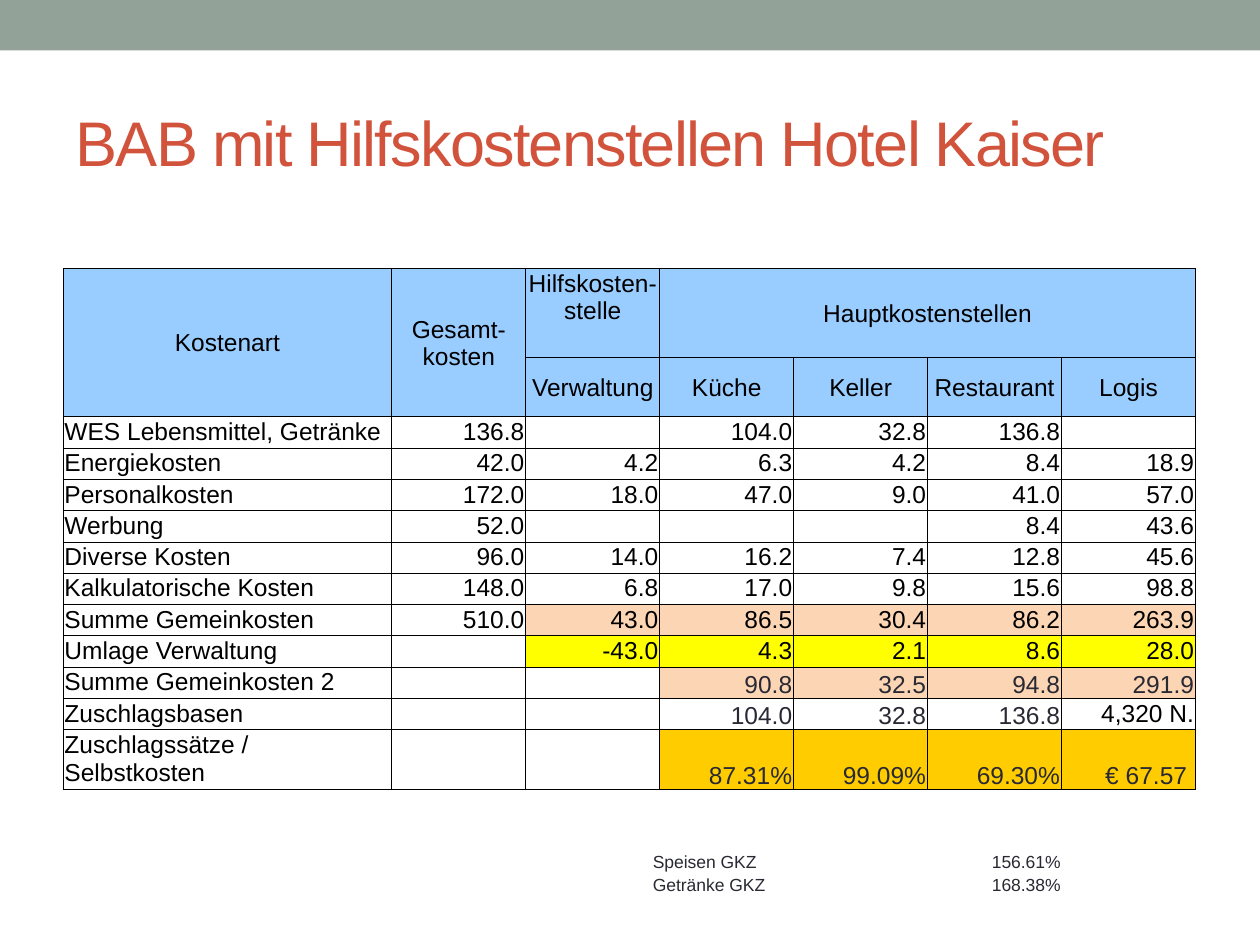
from dataclasses import dataclass
from typing import Optional, Sequence

from lxml.etree import SubElement
from pptx import Presentation
from pptx.dml.color import RGBColor
from pptx.enum.shapes import MSO_SHAPE as SHAPE
from pptx.enum.text import MSO_ANCHOR as ANCHOR, MSO_AUTO_SIZE as AUTO, PP_ALIGN as ALIGN
from pptx.oxml.ns import qn
from pptx.util import Cm, Pt

FONT = "Arial"
BLACK, DARK = "000000", "292934"
BLUE, PEACH, YELLOW, GOLD = "99CCFF", "FCD5B4", "FFFF00", "FFCC00"
MARGINS = {"margin_left": Cm(0.03), "margin_right": Cm(0.03),
           "margin_top": Cm(0.03), "margin_bottom": 0}


@dataclass
class CellFormat:
    size: int = 14
    color: str = BLACK
    fill: Optional[str] = None
    align: ALIGN = ALIGN.LEFT
    anchor: ANCHOR = ANCHOR.TOP
    border: Optional[float] = 0.5


@dataclass
class CostRow:
    label: str
    values: Sequence[str]
    fill: Optional[str] = None
    fill_from: int = 3
    dark: range = range(0)


HEADER = [  # row, column, text, last row, last column
    (0, 0, "Kostenart", 1, 0),
    (0, 1, "Gesamt-kosten", 1, 1),
    (0, 2, "Hilfskosten-stelle", 0, 2),
    (0, 3, "Hauptkostenstellen", 0, 6),
    *((1, col, text, 1, col) for col, text in enumerate(
        ("Verwaltung", "Küche", "Keller", "Restaurant", "Logis"), 2)),
]
COSTS = [
    CostRow("WES Lebensmittel, Getränke", ("136.8", "", "104.0", "32.8", "136.8", "")),
    CostRow("Energiekosten", ("42.0", "4.2", "6.3", "4.2", "8.4", "18.9")),
    CostRow("Personalkosten", ("172.0", "18.0", "47.0", "9.0", "41.0", "57.0")),
    CostRow("Werbung", ("52.0", "", "", "", "8.4", "43.6")),
    CostRow("Diverse Kosten", ("96.0", "14.0", "16.2", "7.4", "12.8", "45.6")),
    CostRow("Kalkulatorische Kosten", ("148.0", "6.8", "17.0", "9.8", "15.6", "98.8")),
    CostRow("Summe Gemeinkosten", ("510.0", "43.0", "86.5", "30.4", "86.2", "263.9"), PEACH, 2),
    CostRow("Umlage Verwaltung", ("", "-43.0", "4.3", "2.1", "8.6", "28.0"), YELLOW, 2),
    CostRow("Summe Gemeinkosten 2", ("", "", "90.8", "32.5", "94.8", "291.9"),
            PEACH, dark=range(3, 7)),
    CostRow("Zuschlagsbasen", ("", "", "104.0", "32.8", "136.8", "4,320 N."), dark=range(3, 6)),
    CostRow("Zuschlagssätze / Selbstkosten", ("", "", "87.31%", "99.09%", "69.30%", " € 67.57 "),
            GOLD, dark=range(3, 7)),
]
SURCHARGES = [("Speisen GKZ", "", "156.61%"), ("Getränke GKZ", "", "168.38%")]


def rgb(value: str) -> RGBColor:
    return RGBColor.from_string(value)


def apply(target, values: dict) -> None:
    for name, value in values.items():
        setattr(target, name, value)


def set_borders(cell, width: Optional[float]) -> None:
    """Outline a cell in black, or clear its lines when there is no width."""
    tc_pr = cell._tc.get_or_add_tcPr()
    for side in ("lnL", "lnR", "lnT", "lnB"):
        line = SubElement(tc_pr, qn(f"a:{side}"))
        if width is None:
            SubElement(line, qn("a:noFill"))
        else:
            line.set("w", str(Pt(width)))
            SubElement(SubElement(line, qn("a:solidFill")), qn("a:srgbClr")).set("val", BLACK)


def format_cell(cell, text: str, fmt: CellFormat) -> None:
    apply(cell, {**MARGINS, "vertical_anchor": fmt.anchor})
    set_borders(cell, fmt.border)
    if fmt.fill:
        cell.fill.solid()
        cell.fill.fore_color.rgb = rgb(fmt.fill)
    else:
        cell.fill.background()
    p = cell.text_frame.paragraphs[0]
    p.alignment = fmt.align
    if text:
        r = p.add_run()
        apply(r, {"text": text})
        apply(r.font, {"name": FONT, "size": Pt(fmt.size)})
        r.font.color.rgb = rgb(fmt.color)
    else:  # keeps empty cells from stretching their row
        SubElement(p._p, qn("a:endParaRPr")).set("sz", str(fmt.size * 100))


def add_plain_table(slide, left: float, top: float, widths: Sequence[float],
                    heights: Sequence[float]):
    frame = slide.shapes.add_table(len(heights), len(widths), Cm(left), Cm(top),
                                   Cm(sum(widths)), Cm(sum(heights)))
    table = frame.table
    apply(table, {"first_row": False, "horz_banding": False})
    for column, width in zip(table.columns, widths):
        column.width = Cm(width)
    for row, height in zip(table.rows, heights):
        row.height = Cm(height)
    return table


def add_title(slide, text: str) -> None:
    sp = slide.shapes.title
    apply(sp, {"left": Cm(1.27), "top": Cm(1.47), "width": Cm(22.86), "height": Cm(2.74)})
    tf = sp.text_frame
    apply(tf, {"word_wrap": True, "auto_size": AUTO.NONE, "vertical_anchor": ANCHOR.MIDDLE})
    p = tf.paragraphs[0]
    p.alignment = ALIGN.LEFT
    r = p.add_run()
    r.text = text
    apply(r.font, {"name": FONT, "size": Pt(36)})
    r.font.color.rgb = rgb("D2533C")
    r._r.get_or_add_rPr().set("spc", "-100")


def add_band(slide) -> None:
    sp = slide.shapes.add_shape(SHAPE.RECTANGLE, 0, 0, Cm(25.4), Cm(1.02))
    sp.shadow.inherit = False
    sp.fill.solid()
    sp.fill.fore_color.rgb = rgb("93A299")
    sp.line.fill.background()


def add_cost_table(slide) -> None:
    heights = [1.79, 1.2] + [0.63] * (len(COSTS) - 1) + [1.21]
    table = add_plain_table(slide, 1.27, 5.41, [6.63] + [2.7] * 6, heights)

    # Header with merged cells
    texts = {(row, col): text for row, col, text, _, _ in HEADER}
    for row, col, _, last_row, last_col in HEADER:
        if (row, col) != (last_row, last_col):
            table.cell(row, col).merge(table.cell(last_row, last_col))
    for row in range(2):
        for col in range(7):
            anchor = ANCHOR.TOP if (row, col) == (0, 2) else ANCHOR.MIDDLE
            format_cell(table.cell(row, col), texts.get((row, col), ""),
                        CellFormat(fill=BLUE, align=ALIGN.CENTER, anchor=anchor))

    # Cost rows
    for row, cost in enumerate(COSTS, 2):
        for col, text in enumerate((cost.label, *cost.values)):
            dark = col in cost.dark
            format_cell(table.cell(row, col), text, CellFormat(
                color=DARK if dark else BLACK,
                fill=cost.fill if col >= cost.fill_from else None,
                align=ALIGN.RIGHT if col else ALIGN.LEFT,
                anchor=ANCHOR.BOTTOM if dark else ANCHOR.TOP))


def add_surcharge_table(slide) -> None:
    table = add_plain_table(slide, 13.13, 17.12, [2.84, 2.72, 2.72], [0.43] * 2)
    for row, texts in enumerate(SURCHARGES):
        for col, text in enumerate(texts):
            format_cell(table.cell(row, col), text, CellFormat(
                size=10, color=DARK, align=ALIGN.RIGHT if col else ALIGN.LEFT,
                anchor=ANCHOR.BOTTOM, border=None))


def main() -> None:
    prs = Presentation()
    apply(prs, {"slide_width": Cm(25.4), "slide_height": Cm(19.05)})
    slide = prs.slides.add_slide(prs.slide_layouts[5])
    add_band(slide)
    add_title(slide, "BAB mit Hilfskostenstellen Hotel Kaiser")
    add_cost_table(slide)
    add_surcharge_table(slide)
    prs.save("out.pptx")


if __name__ == "__main__":
    main()
